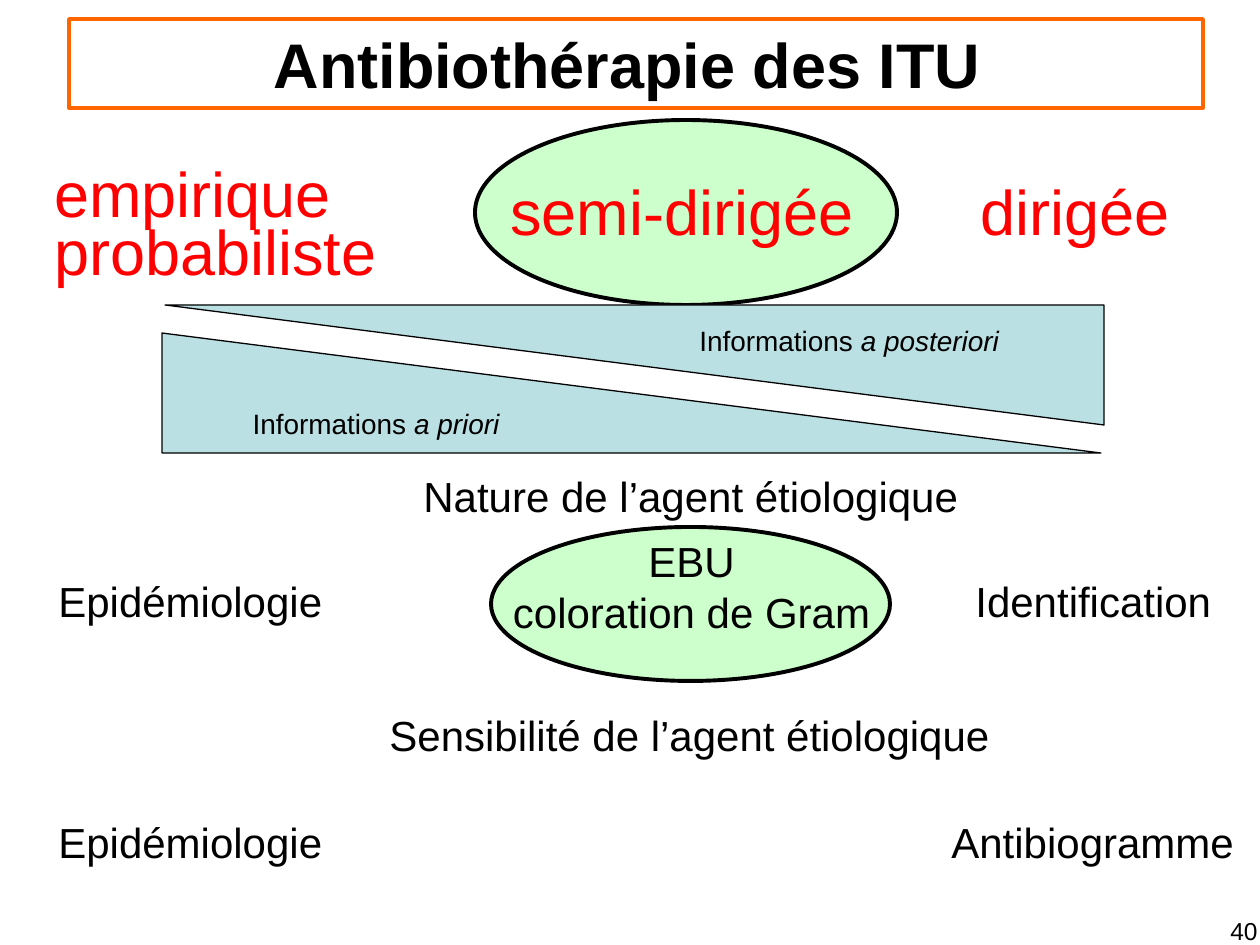
from dataclasses import dataclass

from pptx import Presentation
from pptx.dml.color import RGBColor
from pptx.enum.shapes import MSO_SHAPE as Preset
from pptx.enum.text import MSO_ANCHOR as Anchor, MSO_AUTO_SIZE as AutoSize, PP_ALIGN as Align
from pptx.shapes.autoshape import Shape
from pptx.slide import Slide
from pptx.text.text import TextFrame
from pptx.util import Emu, Pt

EMU_PER_PX = 914400 / 126
FONT = "Arial"
BLACK = RGBColor(0x00, 0x00, 0x00)
RED = RGBColor(0xFF, 0x00, 0x00)
ORANGE = RGBColor(0xFF, 0x66, 0x00)
PALE_GREEN = RGBColor(0xCC, 0xFF, 0xCC)
PALE_BLUE = RGBColor(0xBB, 0xE0, 0xE3)


@dataclass(frozen=True)
class Box:
    left: int
    top: int
    width: int
    height: int


@dataclass(frozen=True)
class Label:
    box: Box
    text: str
    size: int = 24
    color: RGBColor = BLACK
    align: Align = Align.LEFT
    italic: str = ""
    wrap: bool = False
    top_inset: int = 6


@dataclass(frozen=True)
class Figure:
    box: Box
    preset: Preset
    fill: RGBColor
    line_width: float
    rotation: int = 0


THERAPIES = [
    Label(Box(42, 142, 325, 77), "empirique", 36, RED, wrap=True, top_inset=13),
    Label(Box(42, 200, 363, 77), "probabiliste", 36, RED, wrap=True, top_inset=13),
    Label(Box(498, 160, 386, 102), "semi-dirigée", 36, RED, wrap=True, top_inset=13),
    Label(Box(968, 160, 251, 102), "dirigée", 36, RED, wrap=True, top_inset=13),
]
DETAILS = [
    Label(Box(687, 318, 326, 47), "Informations ", 16, italic="a posteriori"),
    Label(Box(411, 465, 561, 63), "Nature de l’agent étiologique"),
    Label(Box(46, 570, 290, 63), "Epidémiologie"),
    Label(Box(963, 570, 261, 63), "Identification"),
    Label(Box(498, 530, 387, 115), "EBU\ncoloration de Gram", align=Align.CENTER),
    Label(Box(377, 704, 626, 63), "Sensibilité de l’agent étiologique"),
    Label(Box(46, 811, 290, 63), "Epidémiologie"),
    Label(Box(939, 811, 309, 63), "Antibiogramme"),
    Label(Box(975, 910, 295, 52), "40", 14, align=Align.RIGHT, wrap=True),
]
ELLIPSES = [
    Figure(Box(491, 527, 399, 154), Preset.OVAL, PALE_GREEN, 2.25),
    Figure(Box(475, 120, 422, 185), Preset.OVAL, PALE_GREEN, 2.25),
]
PRIOR_WEDGE = Figure(Box(162, 333, 939, 120), Preset.RIGHT_TRIANGLE, PALE_BLUE, 0.75)
POSTERIOR_WEDGE = Figure(Box(165, 305, 939, 120), Preset.RIGHT_TRIANGLE, PALE_BLUE, 0.75, 180)
PRIOR_LABEL = Label(PRIOR_WEDGE.box, "Informations ", 16, italic="a priori")


def px(length: int) -> Emu:
    """Convert slide pixels to EMU."""
    return Emu(round(length * EMU_PER_PX))


def place(box: Box) -> tuple[Emu, Emu, Emu, Emu]:
    """Return the box edges and size in EMU."""
    return px(box.left), px(box.top), px(box.width), px(box.height)


def write(text_frame: TextFrame, label: Label) -> None:
    """Fill a text frame with a label and format its runs."""
    text_frame.text = label.text
    text_frame.word_wrap = label.wrap
    text_frame.margin_top = px(label.top_inset)
    if label.italic:
        run = text_frame.paragraphs[-1].add_run()
        run.text = label.italic
        run.font.italic = True
    for paragraph in text_frame.paragraphs:
        paragraph.alignment = label.align
        for run in paragraph.runs:
            run.font.name = FONT
            run.font.size = Pt(label.size)
            run.font.color.rgb = label.color


def add_label(slide: Slide, label: Label) -> None:
    """Add a text box holding one label."""
    shape = slide.shapes.add_textbox(*place(label.box))
    write(shape.text_frame, label)


def add_figure(slide: Slide, figure: Figure) -> Shape:
    """Add a filled, outlined preset shape."""
    shape = slide.shapes.add_shape(figure.preset, *place(figure.box))
    shape.shadow.inherit = False
    shape.rotation = figure.rotation
    shape.fill.solid()
    shape.fill.fore_color.rgb = figure.fill
    shape.line.color.rgb = BLACK
    shape.line.width = Pt(figure.line_width)
    return shape


def format_title(slide: Slide) -> None:
    """Place the title in its orange frame."""
    title = slide.shapes.title
    title.left, title.top, title.width, title.height = place(Box(69, 19, 1134, 89))
    title.line.color.rgb = ORANGE
    title.line.width = Pt(2)
    write(title.text_frame, Label(Box(69, 19, 1134, 89), "Antibiothérapie des ITU ", 36,
                                  align=Align.CENTER, wrap=True))
    title.text_frame.vertical_anchor = Anchor.MIDDLE
    title.text_frame.auto_size = AutoSize.NONE
    title.text_frame.paragraphs[0].runs[0].font.bold = True


def main() -> None:
    """Build and save the slide."""
    presentation = Presentation()
    presentation.slide_width, presentation.slide_height = px(1260), px(945)
    slide = presentation.slides.add_slide(presentation.slide_layouts[5])
    format_title(slide)
    for ellipse in ELLIPSES:
        add_figure(slide, ellipse)
    wedge = add_figure(slide, PRIOR_WEDGE)
    write(wedge.text_frame, PRIOR_LABEL)
    wedge.text_frame.vertical_anchor = Anchor.MIDDLE
    add_figure(slide, POSTERIOR_WEDGE)
    for label in THERAPIES + DETAILS:
        add_label(slide, label)
    presentation.save("out.pptx")


if __name__ == "__main__":
    main()
